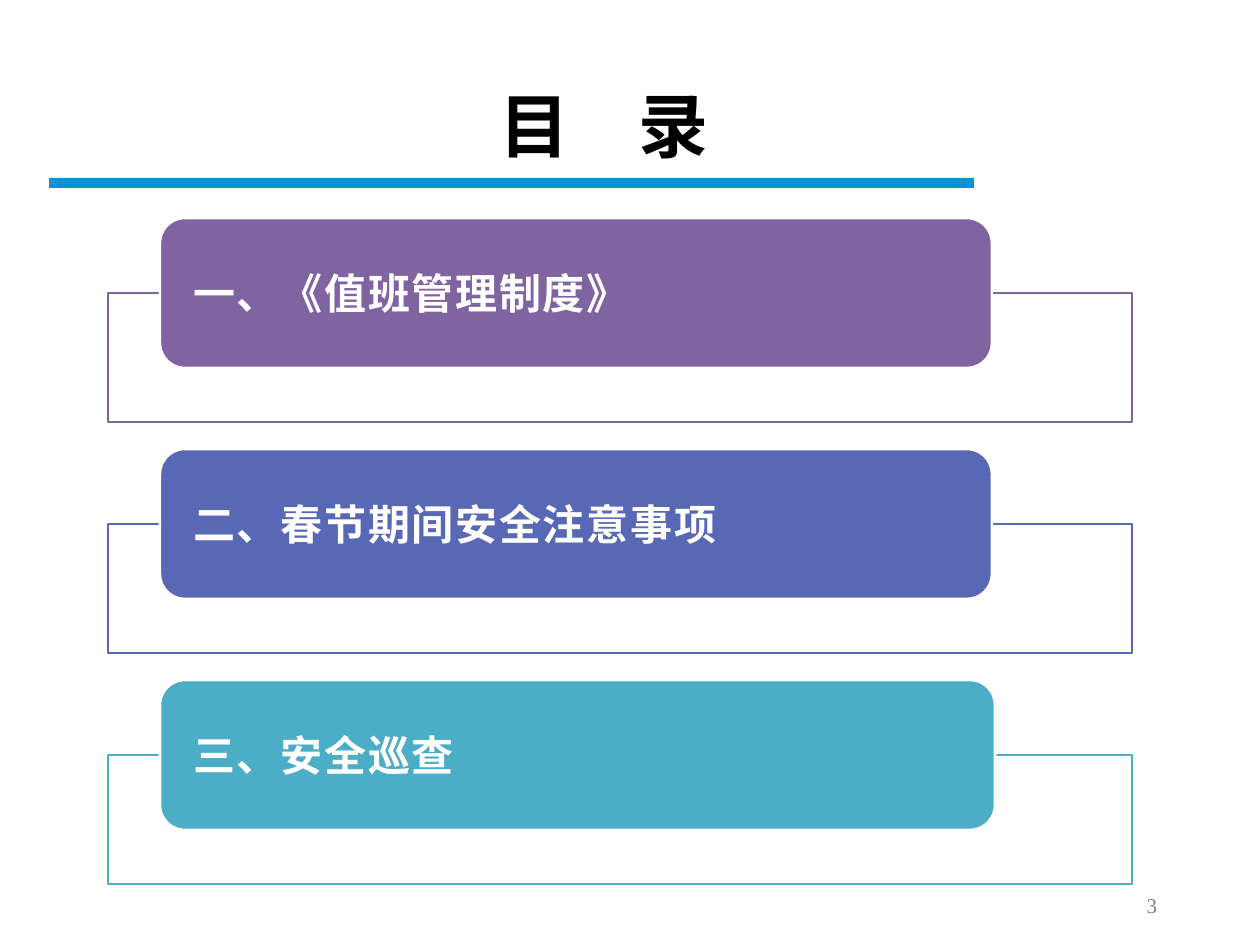
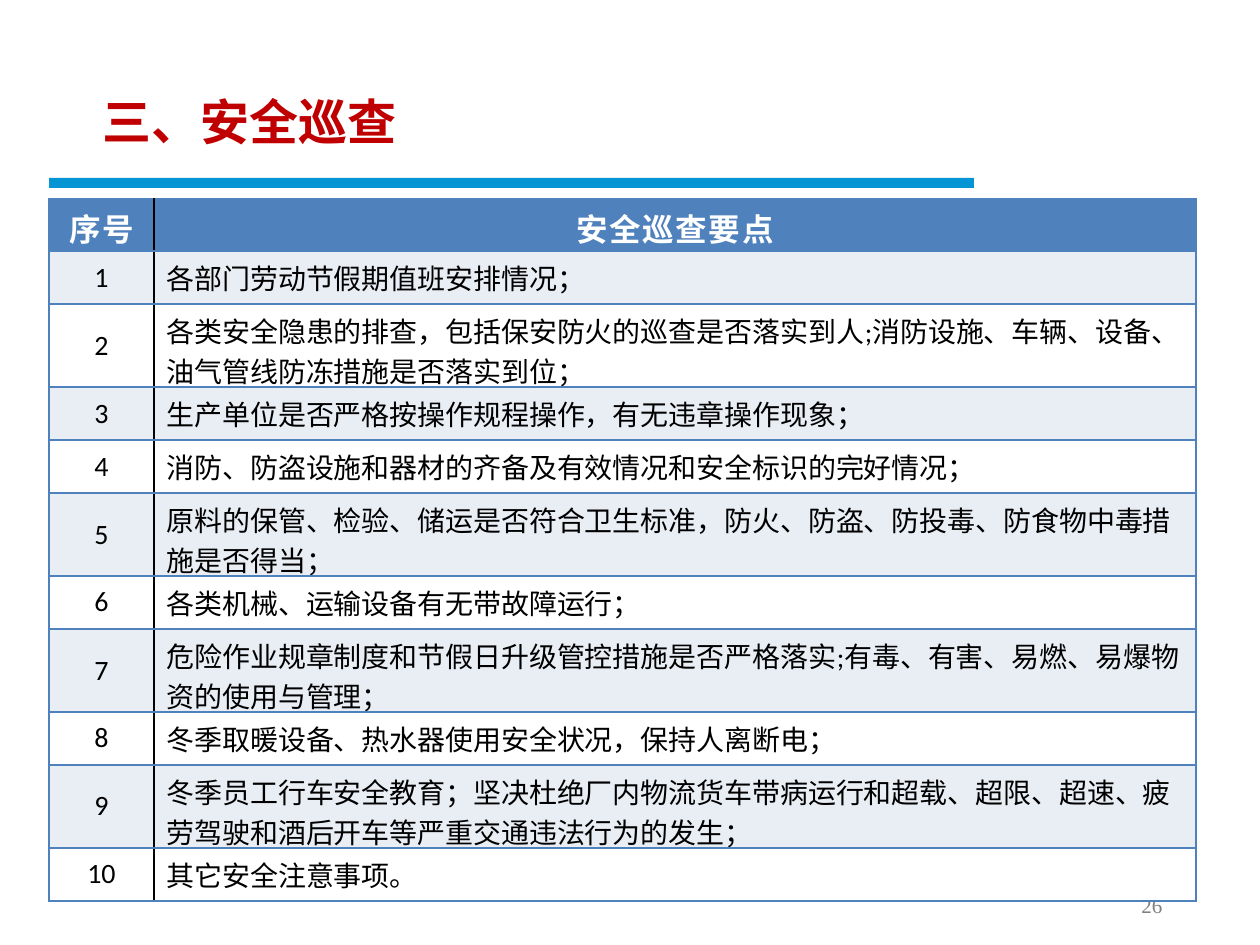
from lxml import etree
from pptx import Presentation
from pptx import util as u
from pptx.dml.color import RGBColor
from pptx.enum import shapes, text
from pptx.oxml.ns import qn

PX_PER_INCH = 126
CJK = "Noto Sans CJK SC"
COLORS = {
    "white": "FFFFFF", "black": "000000", "grey": "808080", "red": "C00000",
    "band": "0595D4", "purple": "8064A2", "indigo": "5868B4", "teal": "4CADC6",
    "table": "4F81BD", "stripe": "E9EDF4",
}
LEFT, CENTER = text.PP_ALIGN.LEFT, text.PP_ALIGN.CENTER
MIDDLE = text.MSO_ANCHOR.MIDDLE


def px(n):
    return u.Emu(round(n * 914400 / PX_PER_INCH))


def rgb(name):
    return RGBColor.from_string(COLORS[name])


class Deck:
    def __init__(self):
        self.prs = Presentation()
        self.prs.slide_width, self.prs.slide_height = px(1260), px(945)
        self.s = None

    def slide(self, number):
        self.s = self.prs.slides.add_slide(self.prs.slide_layouts[5])
        self.shape(49, 178, 925, 10, "band")
        tb = self.s.shapes.add_textbox(px(1113), px(874), px(78), px(50))
        tb.text_frame.word_wrap = True
        p = self.label(tb.text_frame, number, 12, "grey", "Times New Roman", CENTER)
        p.line_spacing = 1.5

    def label(self, tf, words, size, color, font, align=LEFT, bold=False, spacing=0):
        p = tf.paragraphs[0]
        p.text, p.alignment = words, align
        f = p.font
        f.size, f.bold, f.name = u.Pt(size), bold, font
        f.color.rgb = rgb(color)
        props = p._p.pPr.find(qn("a:defRPr"))
        props.set("spc", str(spacing * 100))
        etree.SubElement(props, qn("a:ea")).set("typeface", CJK)
        return p

    def title(self, words, box, size, color, align, margins):
        sp = self.s.shapes.title
        sp.left, sp.top, sp.width, sp.height = map(px, box)
        tf = sp.text_frame
        tf.auto_size, tf.word_wrap = text.MSO_AUTO_SIZE.NONE, True
        tf.vertical_anchor = MIDDLE
        tf.margin_left = tf.margin_right = px(margins[0])
        tf.margin_top = tf.margin_bottom = px(margins[1])
        self.label(tf, words, size, color, CJK, align, bold=True)

    def shape(self, x, y, w, h, fill, line=None, kind=shapes.MSO_SHAPE.RECTANGLE):
        sp = self.s.shapes.add_shape(kind, px(x), px(y), px(w), px(h))
        sp.shadow.inherit = False
        sp.fill.solid()
        sp.fill.fore_color.rgb = rgb(fill)
        if line:
            sp.line.color.rgb = rgb(line)
            sp.line.width = u.Pt(1.5)
        else:
            sp.line.fill.background()
        return sp

    def agenda_item(self, y, width, color, words):
        self.shape(108, y + 75, 1024, 129, "white", color)
        sp = self.shape(160, y, width, 150, color, "white",
                        shapes.MSO_SHAPE.ROUNDED_RECTANGLE)
        tf = sp.text_frame
        tf.margin_left = tf.margin_right = px(26)
        tf.margin_top = tf.margin_bottom = 0
        tf.vertical_anchor = MIDDLE
        self.label(tf, words, 24, "white", "Arial", bold=True, spacing=1)

    def borders(self, cell, **sides):
        props = cell._tc.get_or_add_tcPr()
        for i, side in enumerate("LRTB"):
            ln = etree.Element(qn(f"a:ln{side}"), w=str(u.Pt(1)))
            fill = etree.SubElement(ln, qn("a:solidFill"))
            etree.SubElement(fill, qn("a:srgbClr")).set("val", COLORS[sides.get(side, "table")])
            props.insert(i, ln)

    def cell(self, cell, words, fill, header, column):
        cell.fill.solid()
        cell.fill.fore_color.rgb = rgb(fill)
        cell.vertical_anchor = MIDDLE
        self.borders(cell, **({"L": "black"} if column else {"R": "black"}))
        self.label(cell.text_frame, words, 18 if header else 16,
                   "white" if header else "black", "Calibri",
                   CENTER if header or column == 0 else LEFT,
                   bold=header, spacing=int(header))

    def table(self, x, y, widths, heights, rows):
        frame = self.s.shapes.add_table(len(rows), len(widths), px(x), px(y),
                                        px(sum(widths)), px(sum(heights)))
        tbl = frame.table
        for column, width in zip(tbl.columns, widths):
            column.width = px(width)
        for r, (row, height) in enumerate(zip(rows, heights)):
            tbl.rows[r].height = px(height)
            fill = "table" if r == 0 else "stripe" if r % 2 else "white"
            for c, words in enumerate(row):
                self.cell(tbl.cell(r, c), words, fill, r == 0, c)


AGENDA = [
    ("一、《值班管理制度》", "purple", 832),
    ("二、春节期间安全注意事项", "indigo", 832),
    ("三、安全巡查", "teal", 835),
]
CHECKS = [
    "各部门劳动节假期值班安排情况；",
    "各类安全隐患的排查，包括保安防火的巡查是否落实到人;消防设施、车辆、设备、油气管线防冻措施是否落实到位；",
    "生产单位是否严格按操作规程操作，有无违章操作现象；",
    "消防、防盗设施和器材的齐备及有效情况和安全标识的完好情况；",
    "原料的保管、检验、储运是否符合卫生标准，防火、防盗、防投毒、防食物中毒措施是否得当；",
    "各类机械、运输设备有无带故障运行；",
    "危险作业规章制度和节假日升级管控措施是否严格落实;有毒、有害、易燃、易爆物资的使用与管理；",
    "冬季取暖设备、热水器使用安全状况，保持人离断电；",
    "冬季员工行车安全教育；坚决杜绝厂内物流货车带病运行和超载、超限、超速、疲劳驾驶和酒后开车等严重交通违法行为的发生；",
    "其它安全注意事项。",
]
CHARS_PER_LINE = 36


def main():
    deck = Deck()

    deck.slide("3")
    deck.title("目　录", (451, 76, 306, 97), 40, "black", CENTER, (13, 6))
    for i, (words, color, width) in enumerate(AGENDA):
        deck.agenda_item(218 + i * 231, width, color, words)

    deck.slide("26")
    deck.title("三、安全巡查", (84, 66, 615, 110), 28, "red", LEFT, (19, 10))
    rows = [("序号", "安全巡查要点")]
    rows += [(str(n), check) for n, check in enumerate(CHECKS, 1)]
    heights = [52] + [83 if len(check) > CHARS_PER_LINE else 53 for check in CHECKS]
    deck.table(49, 199, (105, 1042), heights, rows)

    deck.prs.save("out.pptx")


if __name__ == "__main__":
    main()
